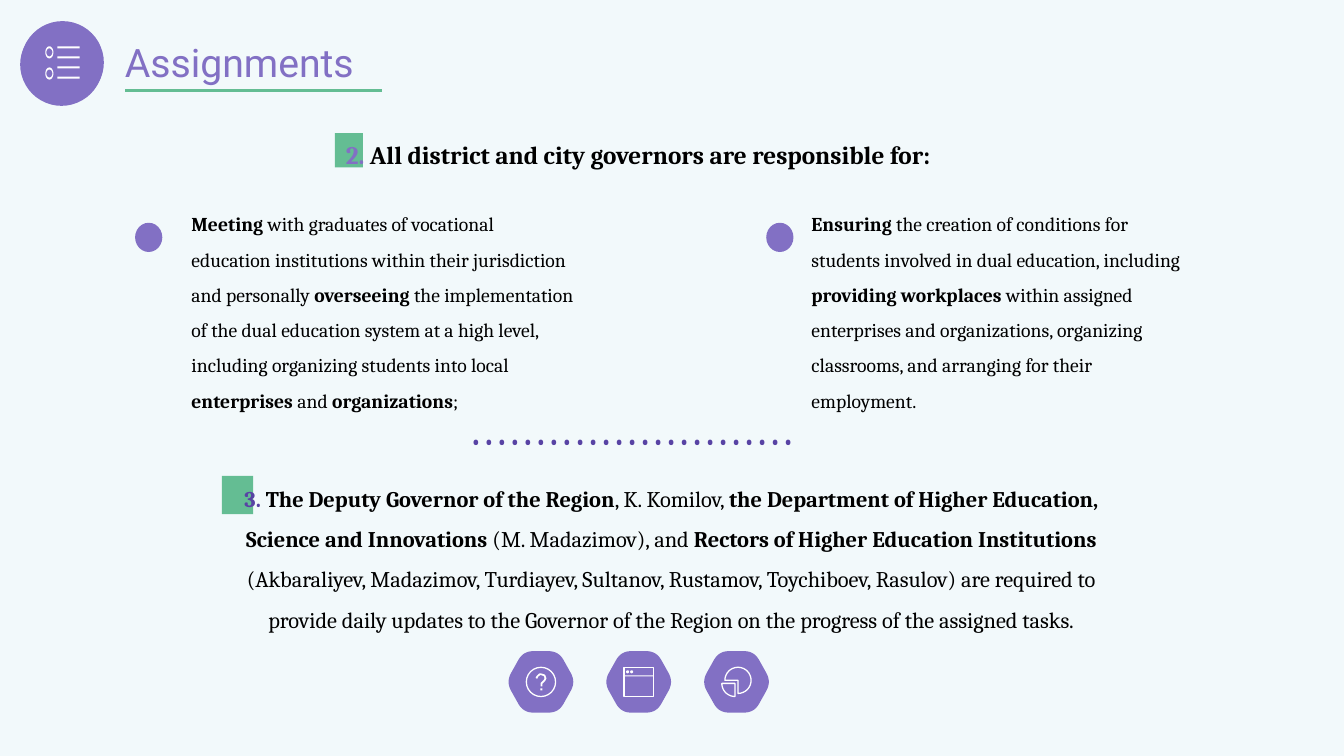
from dataclasses import dataclass
from math import cos, hypot, pi, sin
from lxml import etree
from pptx import Presentation
from pptx.dml.color import RGBColor
from pptx.enum.shapes import MSO_CONNECTOR, MSO_SHAPE
from pptx.enum.text import MSO_AUTO_SIZE, PP_ALIGN
from pptx.oxml.ns import qn
from pptx.util import Inches, Pt

RECT, OVAL = MSO_SHAPE.RECTANGLE, MSO_SHAPE.OVAL
LINE = MSO_CONNECTOR.STRAIGHT
LEFT, MID = PP_ALIGN.LEFT, PP_ALIGN.CENTER
GROW = MSO_AUTO_SIZE.SHAPE_TO_FIT_TEXT


@dataclass(frozen=True)
class Theme:
    paper: str = "F2F9FB"
    main: str = "8270C4"
    deep: str = "5843A4"
    green: str = "64BD93"
    ink: str = "000000"
    white: str = "FFFFFF"
    serif: str = "Cambria"
    sans: str = "Roboto"
    title: int = 28
    head: int = 18
    note: int = 16
    body: int = 14
    thin: float = 0.9


T = Theme()


def rgb(code):
    return RGBColor.from_string(code)


def paint(shape, fill=None, line=None, width=T.thin):
    shape.shadow.inherit = False
    if fill:
        shape.fill.solid()
        shape.fill.fore_color.rgb = rgb(fill)
    else:
        shape.fill.background()
    if line:
        shape.line.color.rgb = rgb(line)
        shape.line.width = Pt(width)
    else:
        shape.line.fill.background()


def block(shapes, kind, x, y, w, h, fill=None, line=None):
    shape = shapes.add_shape(kind, *map(Inches, (x, y, w, h)))
    paint(shape, fill, line)


def trace(shapes, loops, fill=None, line=None, close=True, width=T.thin):
    pen = None
    for loop in loops:
        spots = [(Inches(x), Inches(y)) for x, y in loop]
        if pen is None:
            pen = shapes.build_freeform(*spots[0], scale=1.0)
        else:
            pen.move_to(*spots[0])
        pen.add_line_segments(spots[1:], close=close)
    paint(pen.convert_to_shape(), fill, line, width)


def arc(x, y, rx, ry, start, end):
    turns = [start + (end - start) * i / 24 for i in range(25)]
    return [(x + rx * cos(a), y + ry * sin(a)) for a in turns]


def write(shapes, box, text, size, face=T.serif, color=T.ink,
          align=LEFT, space=1.0, lead=None, tint=None):
    frame = shapes.add_textbox(*map(Inches, box)).text_frame
    frame.word_wrap = True
    frame.auto_size = GROW
    para = frame.paragraphs[0]
    para.alignment = align
    para.line_spacing = space
    para.font.size = Pt(size)
    para.font.name = face
    parts = [(part, i % 2 == 1, color) for i, part in enumerate(text.split("**"))]
    if lead:
        parts.insert(0, (lead, True, tint))
    for part, bold, shade in parts:
        if part:
            run = para.add_run()
            run.text = part
            run.font.bold = bold
            run.font.color.rgb = rgb(shade)


def roster(shapes, x, y):
    loops = []
    for row in range(4):
        top = y + 0.01 + row * 0.1
        loops.append([(x + 0.12, top), (x + 0.34, top),
                      (x + 0.34, top + 0.02), (x + 0.12, top + 0.02)])
    for row in range(2):
        mid = y + 0.07 + row * 0.21
        loops.append(arc(x + 0.04, mid, 0.04, 0.06, 0, 2 * pi))
        loops.append(arc(x + 0.04, mid, 0.03, 0.04, 2 * pi, 0))
    trace(shapes, loops, T.white)


def header(shapes, x, y):
    for dx, dy in ((-0.01, 0.02), (0, 0)):
        block(shapes, OVAL, x + dx, y + dy, 0.82, 0.82, T.main)
    roster(shapes, x + 0.24, y + 0.24)
    write(shapes, (x + 0.93, y + 0.12, 3.24, 0.57), "Assignments",
          T.title, T.sans, T.main)
    rule = shapes.add_connector(
        LINE, *map(Inches, (x + 1.03, y + 0.69, x + 3.58, y + 0.69)))
    rule.line.color.rgb = rgb(T.green)
    rule.line.width = Pt(2.25)
    etree.SubElement(rule._element.spPr, qn("a:effectLst"))


def task(shapes, box, mark, text, size, lead, tint):
    block(shapes, RECT, *mark, T.green)
    write(shapes, box, text, size, align=MID, space=1.5, lead=lead, tint=tint)


def duty(shapes, x, y, gap, text):
    block(shapes, OVAL, x, y + 0.27, 0.27, 0.29, T.main)
    write(shapes, (x + gap, y, 4.01, 2.18), text, T.body, space=1.5)


def badge(shapes, x, y):
    tips = [(-0.01, 0.305), (0.16, 0), (0.51, 0),
            (0.68, 0.305), (0.51, 0.61), (0.16, 0.61)]
    edge = []
    for i, tip in enumerate(tips):
        ends = []
        for mate in (tips[i - 1], tips[(i + 1) % 6]):
            cut = 0.1 / hypot(mate[0] - tip[0], mate[1] - tip[1])
            ends.append([a + (b - a) * cut for a, b in zip(tip, mate)])
        for step in range(9):
            t = step / 8
            px, py = [(1 - t) ** 2 * a + 2 * t * (1 - t) * c + t * t * b
                      for a, c, b in zip(ends[0], tip, ends[1])]
            edge.append((x + px, y + py))
    trace(shapes, [edge], T.main)


def query(shapes, x, y):
    block(shapes, OVAL, x + 0.19, y + 0.16, 0.29, 0.29, line=T.white)
    hook = [(0.29, 0.27), (0.3, 0.25), (0.32, 0.23), (0.34, 0.23), (0.37, 0.24),
            (0.38, 0.27), (0.37, 0.29), (0.34, 0.32), (0.34, 0.35)]
    trace(shapes, [[(x + a, y + b) for a, b in hook]],
          line=T.white, close=False, width=1.25)
    block(shapes, RECT, x + 0.33, y + 0.37, 0.02, 0.02, T.white)


def window(shapes, x, y):
    block(shapes, RECT, x + 0.19, y + 0.16, 0.29, 0.29, line=T.white)
    block(shapes, RECT, x + 0.19, y + 0.24, 0.29, 0.01, T.white)
    for col in range(2):
        block(shapes, OVAL, x + 0.21 + col * 0.04, y + 0.19, 0.03, 0.03, T.white)


def pie(shapes, x, y):
    for dx, dy, start, end in ((0.35, 0.29, -pi, pi / 2), (0.32, 0.32, pi / 2, pi)):
        hub = (x + dx, y + dy)
        trace(shapes, [[hub] + arc(*hub, 0.13, 0.13, start, end)], line=T.white)


def icons(shapes, x, y):
    for i, icon in enumerate((query, window, pie)):
        left = x + i * 0.97
        badge(shapes, left, y)
        icon(shapes, left, y)


def main():
    deck = Presentation()
    deck.slide_width, deck.slide_height = Inches(13.33), Inches(7.5)
    slide = deck.slides.add_slide(deck.slide_layouts[6])
    shapes = slide.shapes
    block(shapes, RECT, 0, 0, 13.33, 7.5, T.paper)
    header(shapes, 0.21, 0.21)
    task(shapes, (1.62, 1.18, 9.42, 0.5), (3.32, 1.32, 0.28, 0.34),
         "**All district and city governors are responsible for:**",
         T.head, "2. ", T.main)
    duty(shapes, 1.34, 1.94, 0.46,
         "**Meeting** with graduates of vocational education institutions within "
         "their jurisdiction and personally **overseeing** the implementation of "
         "the dual education system at a high level, including organizing students "
         "into local **enterprises** and **organizations**;")
    duty(shapes, 7.6, 1.94, 0.35,
         "**Ensuring** the creation of conditions for students involved in dual "
         "education, including **providing workplaces** within assigned enterprises "
         "and organizations, organizing classrooms, and arranging for their "
         "employment.")
    write(shapes, (4.58, 4.21, 3.51, 0.34), "**" + " ".join("•" * 25) + "**",
          T.body, color=T.deep)
    task(shapes, (2.09, 4.63, 9.14, 1.67), (2.2, 4.72, 0.31, 0.38),
         "**The Deputy Governor of the Region**, K. Komilov, **the Department of "
         "Higher Education, Science and Innovations** (M. Madazimov), and **Rectors "
         "of Higher Education Institutions **(Akbaraliyev, Madazimov, Turdiayev, "
         "Sultanov, Rustamov, Toychiboev, Rasulov) are required to provide daily "
         "updates to the Governor of the Region on the progress of the assigned "
         "tasks.", T.note, "3. ", T.deep)
    icons(shapes, 5.03, 6.46)
    deck.save("out.pptx")


if __name__ == "__main__":
    main()
